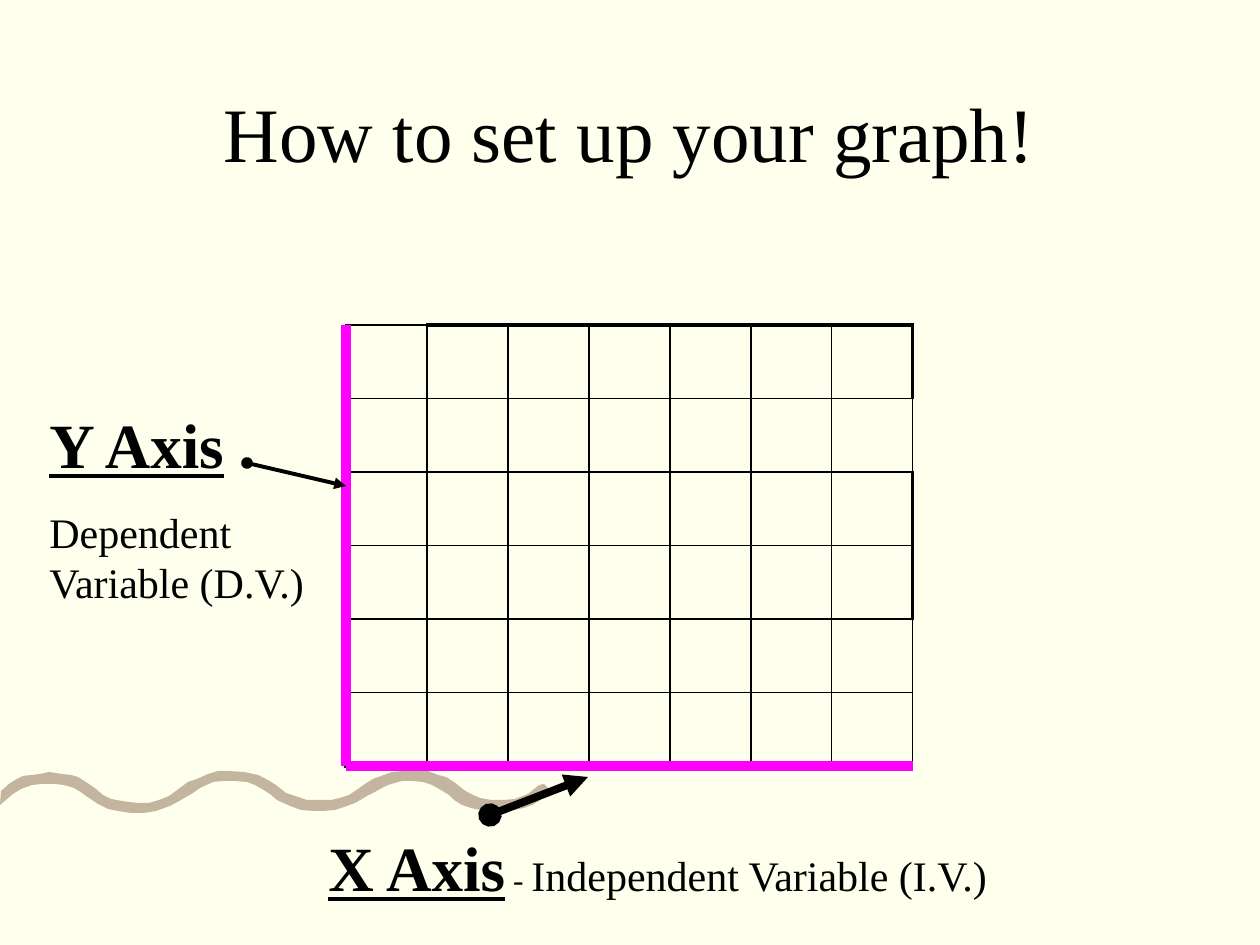
from dataclasses import dataclass

from lxml.etree import SubElement
from pptx import Presentation
from pptx.dml.color import RGBColor as Rgb
from pptx.enum.shapes import MSO_CONNECTOR as Connector
from pptx.enum.text import MSO_ANCHOR as Anchor, PP_ALIGN as Align
from pptx.oxml.ns import qn
from pptx.util import Emu, Pt


@dataclass(frozen=True)
class Theme:
    font: str = "Times New Roman"
    paper: str = "FFFFEE"
    ink: str = "000000"
    axis: str = "FF00FF"
    wave: str = "C3B59F"
    title: int = 44
    heading: int = 36
    body: int = 24
    dash: int = 18
    thin: float = 1
    thick: float = 2.25


THEME = Theme()
EMU_PER_PX = 914400 / 126

ROWS, COLUMNS = 6, 7
LEFT, TOP, WIDTH, HEIGHT = 346, 325, 567, 441
RIGHT, BOTTOM = LEFT + WIDTH, TOP + HEIGHT
THICK_RIGHT_ROWS = (0, 2, 3)

WAVE_TOP = [
    (1, 791), (9, 784), (15, 780), (23, 776), (32, 775), (40, 774), (49, 772),
    (62, 774), (71, 775), (78, 777), (89, 784), (96, 789), (103, 795), (111, 799),
    (122, 801), (137, 803), (149, 803), (159, 800), (169, 796), (176, 791),
    (188, 782), (197, 779), (208, 774), (218, 771), (228, 771), (244, 772),
    (258, 775), (266, 779), (276, 785), (286, 793), (295, 796), (307, 800),
    (331, 800), (340, 798), (349, 795), (358, 789), (365, 784), (373, 779),
    (384, 775), (392, 772), (403, 771), (417, 770), (428, 771), (438, 775),
    (446, 777), (454, 782), (464, 790), (471, 794), (480, 798), (491, 800),
    (504, 800), (515, 799), (528, 794), (533, 790), (539, 785), (544, 784),
    (548, 788), (548, 794),
]
WAVE_BOTTOM = [
    (544, 796), (539, 801), (532, 805), (524, 808), (514, 810), (503, 811),
    (490, 810), (480, 810), (471, 808), (462, 805), (454, 800), (449, 795),
    (441, 790), (432, 785), (423, 782), (412, 781), (402, 781), (388, 785),
    (382, 788), (373, 793), (367, 796), (355, 803), (347, 806), (335, 810),
    (323, 811), (314, 811), (301, 810), (290, 806), (277, 800), (270, 794),
    (262, 789), (255, 785), (247, 782), (234, 781), (223, 781), (213, 782),
    (200, 788), (193, 793), (181, 800), (170, 806), (156, 811), (144, 813),
    (131, 813), (118, 811), (108, 809), (98, 804), (89, 798), (82, 793),
    (74, 788), (64, 785), (55, 784), (42, 784), (32, 785), (21, 789),
    (13, 794), (0, 805),
]


def px(length):
    return Emu(round(length * EMU_PER_PX))


def color(code):
    return Rgb.from_string(code)


def add_wave(slide):
    start, *rest = WAVE_TOP + WAVE_BOTTOM
    builder = slide.shapes.build_freeform(*start, scale=EMU_PER_PX)
    builder.add_line_segments(rest, close=True)
    wave = builder.convert_to_shape()
    wave.shadow.inherit = False
    wave.fill.solid()
    wave.fill.fore_color.rgb = color(THEME.wave)
    wave.line.fill.background()


def add_run(paragraph, text, size, heading=False):
    run = paragraph.add_run()
    run.text = text
    run.font.name = THEME.font
    run.font.size = Pt(size)
    run.font.bold = heading
    run.font.underline = heading
    run.font.color.rgb = color(THEME.ink)


def add_label(slide, box, lines, top_inset=6, anchor=Anchor.TOP, align=Align.LEFT):
    frame = slide.shapes.add_textbox(*map(px, box)).text_frame
    frame.word_wrap = True
    frame.vertical_anchor = anchor
    frame.margin_top = px(top_inset)
    for index, runs in enumerate(lines):
        paragraph = frame.add_paragraph() if index else frame.paragraphs[0]
        paragraph.alignment = align
        if index:
            paragraph.space_before = Pt(14)
        for run in runs:
            add_run(paragraph, *run)


def set_borders(cell, widths):
    properties = cell._tc.get_or_add_tcPr()
    for side, width in widths.items():
        border = SubElement(properties, qn(f"a:ln{side}"), w=str(Pt(width)))
        fill = SubElement(border, qn("a:solidFill"))
        SubElement(fill, qn("a:srgbClr"), val=THEME.ink)


def add_grid(slide):
    grid = slide.shapes.add_table(
        ROWS, COLUMNS, px(LEFT), px(TOP), px(WIDTH), px(HEIGHT)
    ).table
    grid.first_row = grid.horz_banding = False
    for row in range(ROWS):
        for column in range(COLUMNS):
            thick_sides = {
                "L": column == 0 and row > 0,
                "R": column == COLUMNS - 1 and row in THICK_RIGHT_ROWS,
                "T": row == 0 and column > 0,
                "B": row == ROWS - 1,
            }
            cell = grid.cell(row, column)
            set_borders(cell, {
                side: THEME.thick if thick else THEME.thin
                for side, thick in thick_sides.items()
            })
            cell.fill.background()


def add_line(slide, start, end, shade, width, arrow=False):
    line = slide.shapes.add_connector(
        Connector.STRAIGHT, *map(px, (*start, *end))
    )
    line.line.color.rgb = color(shade)
    line.line.width = Pt(width)
    if arrow:
        outline = line.line._get_or_add_ln()
        SubElement(outline, qn("a:headEnd"), type="oval")
        SubElement(outline, qn("a:tailEnd"), type="triangle")
    SubElement(line._element.spPr, qn("a:effectLst"))


def main():
    deck = Presentation()
    deck.slide_width, deck.slide_height = px(1260), px(945)
    slide = deck.slides.add_slide(deck.slide_layouts[6])
    slide.background.fill.solid()
    slide.background.fill.fore_color.rgb = color(THEME.paper)

    add_wave(slide)
    add_label(slide, (94, 53, 1071, 157),
              [[("How to set up your graph!", THEME.title)]],
              anchor=Anchor.MIDDLE, align=Align.CENTER)
    add_grid(slide)

    origin = (LEFT, BOTTOM)
    for shade, width in ((THEME.ink, 0.75), (THEME.axis, 6)):
        add_line(slide, (LEFT, TOP), origin, shade, width)
    add_line(slide, (247, 463), (LEFT, 486), THEME.ink, 2.25, arrow=True)
    add_label(slide, (37, 392, 294, 217), [
        [("Y Axis", THEME.heading, True)],
        [("Dependent Variable (D.V.)", THEME.body)],
    ], top_inset=14)
    add_label(slide, (316, 815, 697, 89), [[
        ("X Axis", THEME.heading, True),
        (" - ", THEME.dash),
        ("Independent Variable (I.V.)", THEME.body),
    ]], top_inset=14)
    add_line(slide, (490, 815), (588, 777), THEME.ink, 4.5, arrow=True)
    add_line(slide, (RIGHT, BOTTOM), origin, THEME.axis, 6)
    deck.save("out.pptx")


if __name__ == "__main__":
    main()
